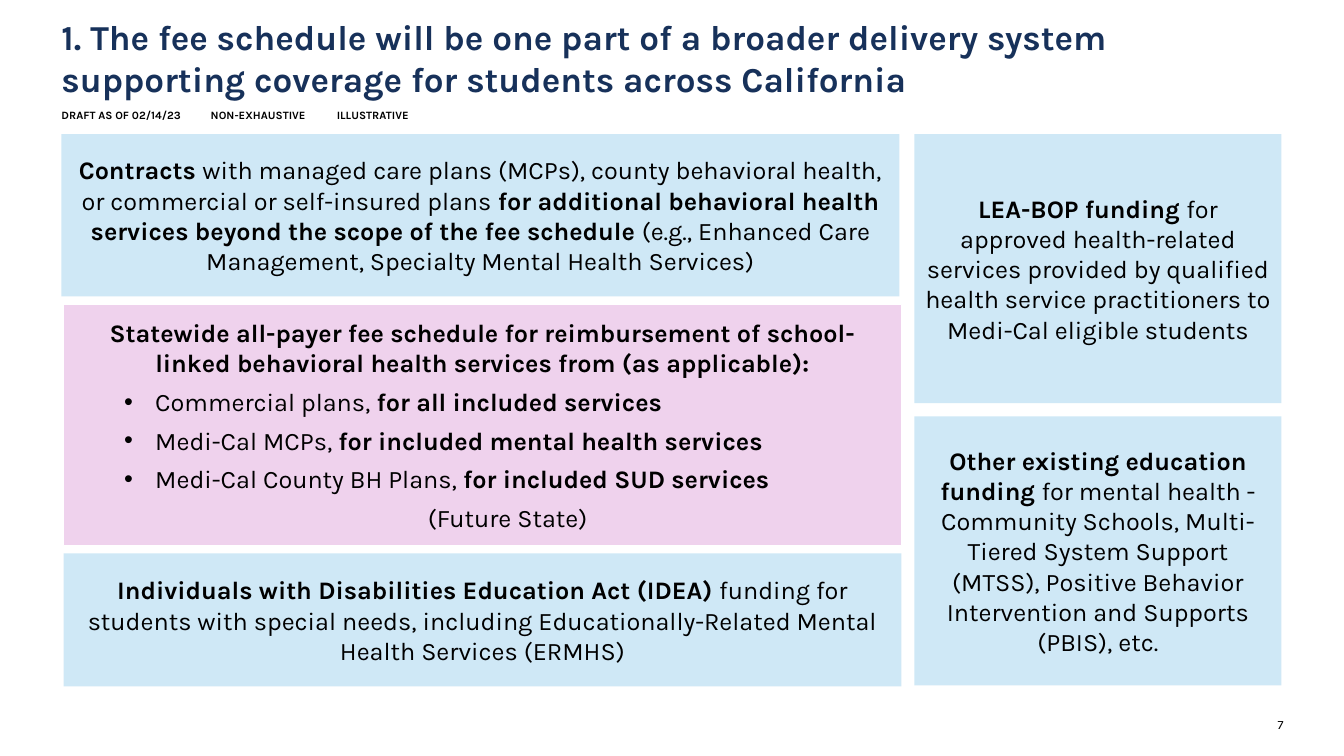
"""Build a slide on the fee schedule within the wider delivery system."""
from dataclasses import dataclass

import pptx
import pptx.dml.color
import pptx.enum.shapes
import pptx.enum.text
import pptx.oxml
import pptx.oxml.ns
import pptx.util

Inches = pptx.util.Inches
Align = pptx.enum.text.PP_ALIGN
Anchor = pptx.enum.text.MSO_ANCHOR

FONT = "Karla"
BLACK, WHITE, NAVY = "000000", "FFFFFF", "17315A"
BLUE, PINK = "CFE8F6", "EFD2ED"
LEFT, TOP, PANEL_WIDTH = 0.61, 1.33, 8.31
SIDE_LEFT, SIDE_WIDTH, SIDE_HEIGHT = 9.07, 3.64, 2.67


@dataclass(frozen=True)
class Box:
    left: float
    top: float
    width: float
    height: float


@dataclass(frozen=True)
class Panel:
    box: Box
    strong: str
    plain: str


@dataclass(frozen=True)
class Tag:
    left: float
    width: float
    text: str


PANELS = (
    Panel(
        Box(LEFT, TOP, PANEL_WIDTH, 1.61),
        "",
        "",
    ),
    Panel(
        Box(0.63, 5.49, PANEL_WIDTH, 1.32),
        "Individuals with Disabilities Education Act (IDEA) ",
        "funding for students with special needs, including Educationally-Related "
        "Mental Health Services (ERMHS)",
    ),
    Panel(
        Box(SIDE_LEFT, TOP, SIDE_WIDTH, SIDE_HEIGHT),
        "LEA-BOP funding ",
        "for approved health-related services provided by qualified health service "
        "practitioners to Medi-Cal eligible students",
    ),
    Panel(
        Box(SIDE_LEFT, 4.13, SIDE_WIDTH, SIDE_HEIGHT),
        "Other existing education funding ",
        "for mental health - Community Schools, Multi-Tiered System Support (MTSS), "
        "Positive Behavior Intervention and Supports (PBIS), etc.",
    ),
)
CONTRACTS = (
    ("Contracts ", True),
    ("with managed care plans (MCPs), county behavioral health, or commercial or "
     "self-insured plans ", False),
    ("for additional behavioral health services beyond the scope of the fee schedule ",
     True),
    ("(e.g., Enhanced Care Management, Specialty Mental Health Services)", False),
)
PAYERS = (
    ("Commercial plans, ", "for all included services"),
    ("Medi-Cal MCPs, ", "for included mental health services"),
    ("Medi-Cal County BH Plans, ", "for included SUD services"),
)
TAGS = (
    Tag(LEFT, 1.23, "DRAFT AS OF 02/14/23"),
    Tag(2.09, 0.99, "NON-EXHAUSTIVE"),
    Tag(3.34, 0.78, "ILLUSTRATIVE"),
)


def color(value: str):
    """Turn a hex string into a colour."""
    return pptx.dml.color.RGBColor.from_string(value)


def place(shape, box: Box) -> None:
    """Move and size a shape."""
    shape.left, shape.top = Inches(box.left), Inches(box.top)
    shape.width, shape.height = Inches(box.width), Inches(box.height)


def set_frame(frame, anchor, margin: bool = True, wrap: bool = True) -> None:
    """Set the anchor, insets and wrapping of a text frame."""
    frame.auto_size = pptx.enum.text.MSO_AUTO_SIZE.NONE
    frame.word_wrap = wrap
    frame.vertical_anchor = anchor
    frame.margin_left = frame.margin_right = Inches(0.1 if margin else 0)
    frame.margin_top = frame.margin_bottom = Inches(0.05 if margin else 0)


def add_text(paragraph, text: str, *, size: float = 18, bold: bool = False,
             fill: str = BLACK) -> None:
    """Add one formatted run to a paragraph."""
    run = paragraph.add_run()
    run.text = text
    run.font.name = FONT
    run.font.size = pptx.util.Pt(size)
    run.font.bold = bold
    run.font.color.rgb = color(fill)


def set_paragraph(paragraph, align, *, before: float = 0, after: float = 0,
                  level: int = 0, margin: float = 0, indent: float = 0,
                  bullet: str = "") -> None:
    """Set the alignment, spacing, indents and bullet of a paragraph."""
    properties = paragraph._p.get_or_add_pPr()
    properties.set("marL", str(Inches(margin)))
    properties.set("indent", str(Inches(indent)))
    namespace = pptx.oxml.ns.nsdecls("a")
    markup = (f'<a:buChar {namespace} char="{bullet}"/>' if bullet
              else f"<a:buNone {namespace}/>")
    properties.append(pptx.oxml.parse_xml(markup))
    paragraph.alignment = align
    paragraph.level = level
    paragraph.space_before = pptx.util.Pt(before)
    paragraph.space_after = pptx.util.Pt(after)


def add_label(slide, box: Box, text: str, *, size: float, bold: bool = False,
              align=Align.LEFT, anchor=Anchor.TOP) -> None:
    """Add a small text box on one line."""
    shape = slide.shapes.add_textbox(0, 0, 0, 0)
    place(shape, box)
    set_frame(shape.text_frame, anchor, margin=False, wrap=False)
    paragraph = shape.text_frame.paragraphs[0]
    set_paragraph(paragraph, align)
    add_text(paragraph, text, size=size, bold=bold)


def add_panel(slide, panel: Panel) -> None:
    """Add a blue panel of centred text."""
    shape = slide.shapes.add_shape(pptx.enum.shapes.MSO_SHAPE.RECTANGLE, 0, 0, 0, 0)
    place(shape, panel.box)
    shape.shadow.inherit = False
    shape.fill.solid()
    shape.fill.fore_color.rgb = color(BLUE)
    shape.line.fill.background()
    set_frame(shape.text_frame, Anchor.MIDDLE)
    paragraph = shape.text_frame.paragraphs[0]
    set_paragraph(paragraph, Align.CENTER, after=3)
    runs = ((panel.strong, True), (panel.plain, False)) if panel.strong else CONTRACTS
    for text, bold in runs:
        add_text(paragraph, text, bold=bold)


def fill_schedule(body) -> None:
    """Format the body placeholder as the pink fee schedule panel."""
    place(body, Box(0.63, 3.02, PANEL_WIDTH, 2.39))
    body.fill.solid()
    body.fill.fore_color.rgb = color(PINK)
    body.line.color.rgb = color(WHITE)
    body.line.width = pptx.util.Pt(0.5)
    frame = body.text_frame
    set_frame(frame, Anchor.MIDDLE)
    heading = frame.paragraphs[0]
    set_paragraph(heading, Align.CENTER, after=3)
    add_text(heading, "Statewide all-payer fee schedule for reimbursement of school-linked "
             "behavioral health services from (as applicable):", bold=True)
    for payer, services in PAYERS:
        paragraph = frame.add_paragraph()
        set_paragraph(paragraph, Align.LEFT, before=3, after=3, level=1,
                      margin=0.81, indent=-0.31, bullet="•")
        add_text(paragraph, payer)
        add_text(paragraph, services, bold=True)
    closing = frame.add_paragraph()
    set_paragraph(closing, Align.CENTER, before=3, after=3, level=1, margin=0.5)
    add_text(closing, "(Future State)")


def main() -> None:
    """Build and save the slide."""
    presentation = pptx.Presentation()
    presentation.slide_width, presentation.slide_height = Inches(13.33), Inches(7.5)
    slide = presentation.slides.add_slide(presentation.slide_layouts[1])
    title = slide.shapes.title
    place(title, Box(LEFT, 0.19, 12.12, 0.8))
    set_frame(title.text_frame, Anchor.BOTTOM, margin=False)
    paragraph = title.text_frame.paragraphs[0]
    set_paragraph(paragraph, Align.LEFT)
    add_text(paragraph, "1. The fee schedule will be one part of a broader delivery system "
             "supporting coverage for students across California",
             size=25, bold=True, fill=NAVY)
    fill_schedule(slide.placeholders[1])
    for panel in PANELS:
        add_panel(slide, panel)
    for tag in TAGS:
        add_label(slide, Box(tag.left, 1.07, tag.width, 0.13), tag.text, size=8, bold=True)
    add_label(slide, Box(12.37, 7.11, 0.36, 0.15), "7", size=9,
              align=Align.RIGHT, anchor=Anchor.BOTTOM)
    presentation.save("out.pptx")


if __name__ == "__main__":
    main()
